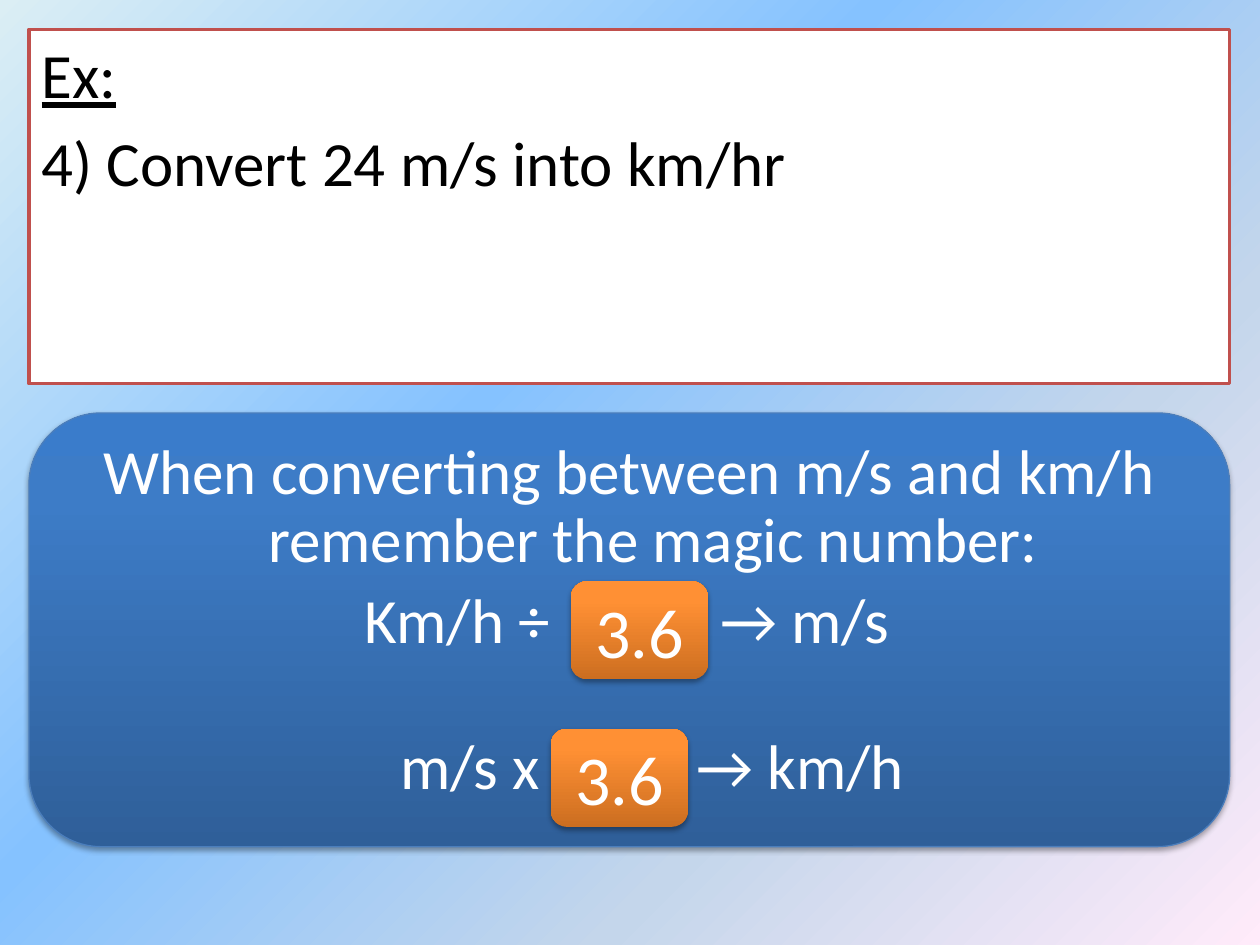
from dataclasses import dataclass

from lxml import etree
from pptx import Presentation
from pptx.dml.color import RGBColor
from pptx.enum.shapes import MSO_SHAPE
from pptx.enum.text import MSO_ANCHOR, PP_ALIGN
from pptx.oxml.ns import qn
from pptx.util import Inches, Pt

RECTANGLE_ROUND = MSO_SHAPE.ROUNDED_RECTANGLE
CENTER, LEFT = PP_ALIGN.CENTER, PP_ALIGN.LEFT
TOP, MIDDLE = MSO_ANCHOR.TOP, MSO_ANCHOR.MIDDLE


@dataclass(frozen=True)
class Theme:
    font: str = "Calibri"
    body_size: int = 36
    chip_size: int = 40
    dark: str = "000000"
    light: str = "FFFFFF"
    frame: str = "C0504D"
    panel_edge: str = "4B7EBC"
    sky: tuple = ((0, "DBEEF4"), (40, "85C2FF"), (70, "C4D6EB"), (100, "FFEBFA"))
    blue: tuple = ((0, "2F5F99"), (80, "3D7CC7"), (100, "3A7CCB"))
    orange: tuple = ((0, "CC6E20"), (80, "FF9034"), (100, "FF9136"))


def add_node(parent, tag, **attributes):
    values = {name: str(value) for name, value in attributes.items()}
    return etree.SubElement(parent, qn(tag), values)


class SlideBuilder:
    def __init__(self, deck, theme):
        self.deck = deck
        self.theme = theme
        self.page = deck.slides.add_slide(deck.slide_layouts[1])
        title = self.page.shapes.title
        title._element.getparent().remove(title._element)

    def across(self, percent):
        return int(self.deck.slide_width * percent / 100)

    def down(self, percent):
        return int(self.deck.slide_height * percent / 100)

    def area(self, left, top, width, height):
        return self.across(left), self.down(top), self.across(width), self.down(height)

    def gradient(self, fill, owner, stops, angle):
        fill.gradient()
        fill.gradient_angle = angle
        stop_list = owner.find(".//" + qn("a:gsLst"))
        for stop in list(stop_list):
            stop_list.remove(stop)
        for position, color in stops:
            stop = add_node(stop_list, "a:gs", pos=position * 1000)
            add_node(stop, "a:srgbClr", val=color)

    def background(self):
        self.gradient(self.page.background.fill, self.page._element, self.theme.sky, 315)

    def shadow(self, shape):
        shape.shadow.inherit = False
        effects = shape._element.spPr.find(qn("a:effectLst"))
        outer = add_node(effects, "a:outerShdw", blurRad=Pt(3.1), dist=Pt(1.8),
                         dir=5400000, rotWithShape=0)
        color = add_node(outer, "a:srgbClr", val=self.theme.dark)
        add_node(color, "a:alpha", val=35000)

    def format_text(self, para, size, color, align):
        para.alignment = align
        for span in para.runs:
            span.font.name = self.theme.font
            span.font.size = Pt(size)
            span.font.color.rgb = RGBColor.from_string(color)

    def exercise(self, area, lines, indents):
        box = self.page.placeholders[1]
        box.left, box.top, box.width, box.height = self.area(*area)
        box.fill.solid()
        box.fill.fore_color.rgb = RGBColor.from_string(self.theme.light)
        box.line.color.rgb = RGBColor.from_string(self.theme.frame)
        box.line.width = Pt(2)
        box.text_frame.text = "\n".join(lines)
        for para, indent in zip(box.text_frame.paragraphs, indents):
            self.format_text(para, self.theme.body_size, self.theme.dark, LEFT)
            properties = para._p.get_or_add_pPr()
            properties.set("marL", str(Inches(indent)))
            properties.set("indent", str(-Inches(indent)))
            add_node(properties, "a:buNone")
        box.text_frame.paragraphs[0].runs[0].font.underline = True

    def rounded(self, area, stops, text, size, anchor):
        box = self.page.shapes.add_shape(RECTANGLE_ROUND, *self.area(*area))
        self.gradient(box.fill, box._element.spPr, stops, 90)
        box.line.fill.background()
        self.shadow(box)
        frame = box.text_frame
        frame.word_wrap = True
        frame.vertical_anchor = anchor
        frame.text = text
        for para in frame.paragraphs:
            self.format_text(para, size, self.theme.light, CENTER)
        return box

    def panel(self, area, heading, formulas):
        text = "\n".join([heading] + [formula for formula, _, _ in formulas])
        box = self.rounded(area, self.theme.blue, text, self.theme.body_size, TOP)
        box.line.color.rgb = RGBColor.from_string(self.theme.panel_edge)
        box.line.width = Pt(0.75)
        first, *rest = box.text_frame.paragraphs
        first.line_spacing = 0.9
        first.space_before = Pt(7)
        properties = first._p.get_or_add_pPr()
        properties.set("marL", str(Inches(0.38)))
        properties.set("indent", str(-Inches(0.38)))
        for para, (_, space, stops) in zip(rest, formulas):
            para.alignment = LEFT
            para.line_spacing = 0.9
            para.space_before = Pt(space)
            tabs = add_node(para._p.get_or_add_pPr(), "a:tabLst")
            for stop in stops:
                add_node(tabs, "a:tab", pos=self.across(stop), algn="l")

    def chip(self, left, top, text):
        self.rounded((left, top, 10.9, 10.4), self.theme.orange, text,
                     self.theme.chip_size, MIDDLE)


def main():
    deck = Presentation()
    deck.slide_width, deck.slide_height = Inches(10), Inches(7.5)
    builder = SlideBuilder(deck, Theme())
    builder.background()
    builder.exercise((2.3, 3.1, 95.3, 37.5),
                     ["Ex:", "4) Convert 24 m/s into km/hr"], [0.38, 0.56])
    builder.panel((2.3, 43.7, 95.3, 45.9),
                  "When converting between m/s and km/h remember the magic number:",
                  [("\tKm/h ÷\t→ m/s", 7, (24, 52.2)),
                   ("\tm/s x\t→ km/h", 45, (26.8, 50.3))])
    for left, top in ((45.3, 61.5), (43.7, 77.1)):
        builder.chip(left, top, "3.6")
    deck.save("out.pptx")


if __name__ == "__main__":
    main()
